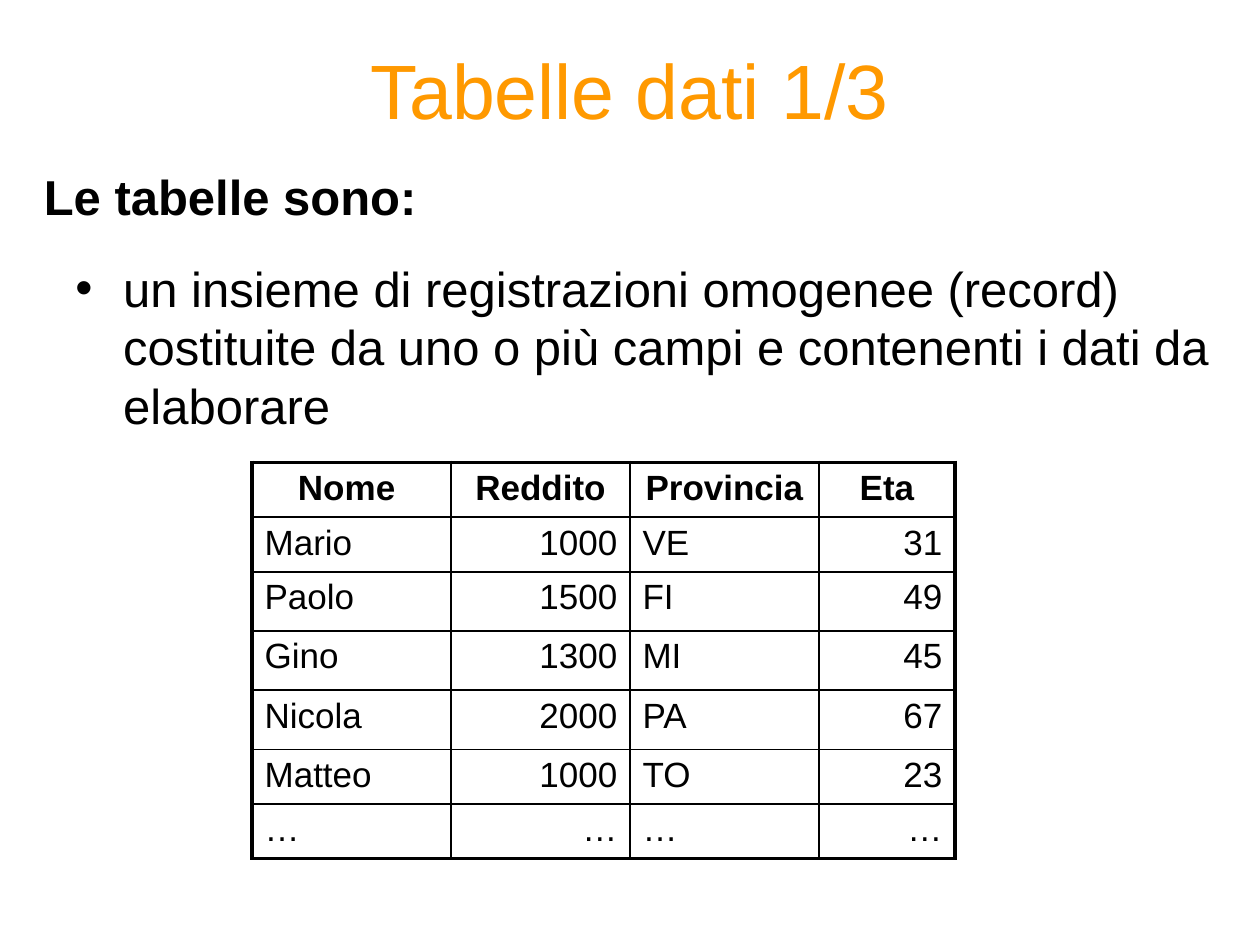
"""Build the slide on data tables, with a sample table of records."""
from lxml.etree import SubElement
from pptx import Presentation
from pptx.dml.color import RGBColor
from pptx.enum.text import MSO_ANCHOR as Anchor, PP_ALIGN as Align
from pptx.oxml.ns import qn
from pptx.util import Inches, Pt


def write(frame, text, size=28, color="000000", bold=False, align=Align.LEFT,
          before=0, anchor=Anchor.TOP):
    frame.word_wrap = True
    frame.vertical_anchor = anchor
    paragraph = frame.paragraphs[0]
    paragraph.alignment = align
    paragraph.space_before = Pt(before)
    run = paragraph.add_run()
    run.text = text
    run.font.name = "Arial"
    run.font.size = Pt(size)
    run.font.bold = bold
    run.font.color.rgb = RGBColor.from_string(color)
    return paragraph


def add_border(cell, side, width, color="000000"):
    line = SubElement(cell._tc.get_or_add_tcPr(), qn(f"a:{side}"), w=str(Pt(width)))
    fill = SubElement(line, qn("a:solidFill"))
    SubElement(fill, qn("a:srgbClr"), val=color)


prs = Presentation()
prs.slide_width = Inches(10)
prs.slide_height = Inches(7.5)
slide = prs.slides.add_slide(prs.slide_layouts[6])

title = slide.shapes.add_textbox(Inches(0.5), Inches(0.08), Inches(9), Inches(1.25))
write(title.text_frame, "Tabelle dati 1/3", size=44, color="FF9900",
      align=Align.CENTER, anchor=Anchor.MIDDLE)

definition = slide.shapes.add_textbox(Inches(0.5), Inches(2), Inches(9.33), Inches(1.67))
point = write(definition.text_frame,
              "un insieme di registrazioni omogenee (record) costituite da uno o più "
              "campi e contenenti i dati da elaborare", before=5.6)
bullet = point._p.get_or_add_pPr()
bullet.set("marL", str(Inches(0.38)))
bullet.set("indent", str(Inches(-0.38)))
SubElement(bullet, qn("a:buFont"), typeface="Arial")
SubElement(bullet, qn("a:buChar"), char="•")

records = [
    ("Nome ", "Reddito", "Provincia", "Eta"),
    ("Mario", "1000", "VE", "31"),
    ("Paolo", "1500", "FI", "49"),
    ("Gino", "1300", "MI", "45"),
    ("Nicola", "2000", "PA", "67"),
    ("Matteo", "1000", "TO", "23"),
    ("…", "…", "…", "…"),
]
widths = [1.58, 1.42, 1.5, 1.08]
heights = [0.43, 0.43, 0.47, 0.47, 0.47, 0.43, 0.43]
alignments = [Align.LEFT, Align.RIGHT, Align.LEFT, Align.RIGHT]
last_row, last_col = len(heights) - 1, len(widths) - 1

table = slide.shapes.add_table(len(heights), len(widths), Inches(2), Inches(3.67),
                               Inches(sum(widths)), Inches(sum(heights))).table
table.first_row = table.horz_banding = False
for column, width in zip(table.columns, widths):
    column.width = Inches(width)
for row, height in zip(table.rows, heights):
    row.height = Inches(height)

for r, record in enumerate(records):
    for c, value in enumerate(record):
        cell = table.cell(r, c)
        header = r == 0
        write(cell.text_frame, value, size=20, bold=header, before=4,
              align=Align.CENTER if header else alignments[c])
        outer = {"lnL": c == 0, "lnR": c == last_col, "lnT": header, "lnB": r == last_row}
        for side, is_outer in outer.items():
            add_border(cell, side, 2.25 if is_outer else 1)
        cell.fill.background()

heading = slide.shapes.add_textbox(Inches(0.25), Inches(1.27), Inches(6.08), Inches(0.57))
write(heading.text_frame, "Le tabelle sono:", bold=True, before=14)

prs.save("out.pptx")
